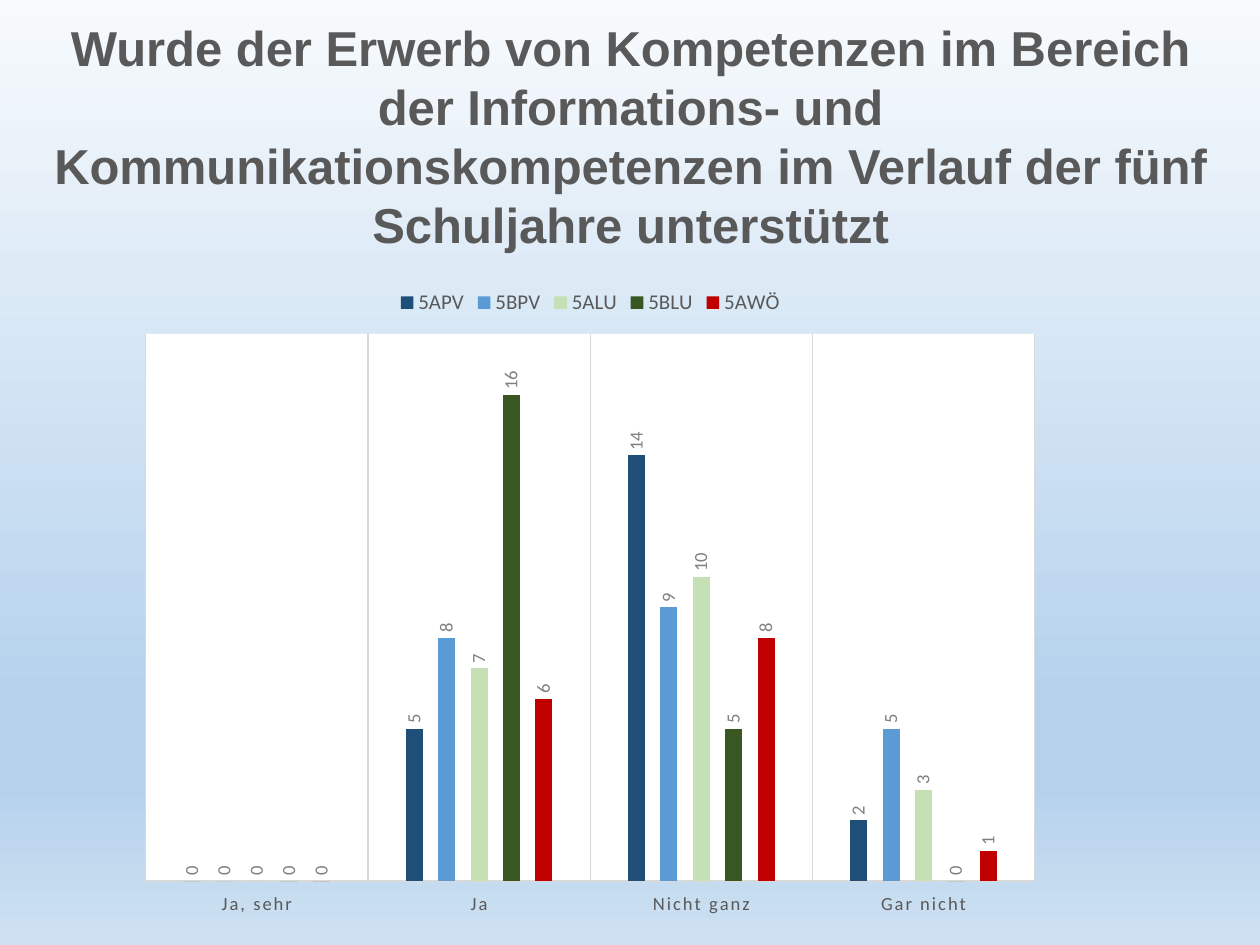
from dataclasses import dataclass

from lxml.etree import SubElement
from pptx import Presentation
from pptx.chart.data import CategoryChartData
from pptx.dml.color import RGBColor
from pptx.enum.chart import XL_CHART_TYPE as ChartType
from pptx.enum.chart import XL_LABEL_POSITION as LabelPos
from pptx.enum.chart import XL_LEGEND_POSITION as LegendPos
from pptx.enum.chart import XL_TICK_LABEL_POSITION as TickLabelPos
from pptx.enum.chart import XL_TICK_MARK as TickMark
from pptx.enum.text import PP_ALIGN as Align
from pptx.oxml import parse_xml
from pptx.oxml.ns import nsdecls, qn
from pptx.util import Pt


@dataclass(frozen=True)
class Theme:
    heading_font: str = "Arial"
    chart_font: str = "Calibri"
    heading_size: float = 28
    legend_size: float = 12
    label_size: float = 10.6
    text: str = "595959"
    value: str = "808080"
    grid: str = "D9D9D9"
    plot: str = "FFFFFF"
    backdrop: tuple = ((0, "F7FAFD"), (74, "B5D2EC"), (83, "B5D2EC"), (100, "CEE1F2"))


THEME = Theme()
QUESTION = (
    "Wurde der Erwerb von Kompetenzen im Bereich der Informations- und "
    "Kommunikationskompetenzen im Verlauf der fünf Schuljahre unterstützt"
)
ANSWERS = ("Ja, sehr", "Ja", "Nicht ganz", "Gar nicht")
CLASSES = (
    ("5APV", (0, 5, 14, 2), "1F4E79"),
    ("5BPV", (0, 8, 9, 5), "5B9BD5"),
    ("5ALU", (0, 7, 10, 3), "C5E0B4"),
    ("5BLU", (0, 16, 5, 0), "385723"),
    ("5AWÖ", (0, 6, 8, 1), "C00000"),
)


def style_font(font, name, size, color, bold=False):
    font.name = name
    font.size = Pt(size)
    font.bold = bold
    font.color.rgb = RGBColor.from_string(color)


def style_line(line):
    line.color.rgb = RGBColor.from_string(THEME.grid)
    line.width = Pt(0.75)


def paint_background(slide):
    fill = slide.background.fill
    fill.gradient()
    fill.gradient_angle = 270  # top to bottom
    stops = slide.element.find(".//" + qn("a:gsLst"))
    stops.clear()
    for percent, color in THEME.backdrop:
        stop = SubElement(stops, qn("a:gs"), pos=str(percent * 1000))
        SubElement(stop, qn("a:srgbClr"), val=color)


def add_question(slide):
    question = slide.shapes.add_textbox(Pt(12.24), Pt(6.48), Pt(696.24), Pt(143.28))
    frame = question.text_frame
    frame.word_wrap = True
    frame.text = QUESTION
    paragraph = frame.paragraphs[0]
    paragraph.alignment = Align.CENTER
    style_font(paragraph.runs[0].font, THEME.heading_font, THEME.heading_size,
               THEME.text, bold=True)


def style_axes(chart):
    answers = chart.category_axis
    answers.major_tick_mark = TickMark.NONE
    answers.tick_label_position = TickLabelPos.LOW
    answers.has_major_gridlines = True
    style_line(answers.major_gridlines.format.line)
    style_line(answers.format.line)
    style_font(answers.tick_labels.font, THEME.chart_font, THEME.label_size, THEME.text)
    # Letter spacing of the answers
    chart.element.find(".//" + qn("c:catAx")).find(".//" + qn("a:defRPr")).set("spc", "120")

    counts = chart.value_axis
    counts.minimum_scale, counts.maximum_scale = 0, 18
    counts.has_major_gridlines = False
    counts.visible = False


def style_series(plot):
    plot.gap_width = 444
    plot.overlap = -90
    plot.vary_by_categories = False
    for series, (_, _, color) in zip(plot.series, CLASSES):
        series.format.fill.solid()
        series.format.fill.fore_color.rgb = RGBColor.from_string(color)
        labels = series.data_labels
        labels.show_value = True
        labels.position = LabelPos.OUTSIDE_END
        style_font(labels.font, THEME.chart_font, THEME.label_size, THEME.value)
        # Turn the values upright
        body = series.data_labels._element.find(".//" + qn("a:bodyPr"))
        body.set("rot", "-5400000")
        body.set("vert", "horz")


def set_plot_area(chart, x, y, w, h):
    area = chart.element.find(".//" + qn("c:plotArea"))
    for layout in area.findall(qn("c:layout")):
        area.remove(layout)
    area.insert(0, parse_xml(
        f'<c:layout {nsdecls("c")}><c:manualLayout><c:layoutTarget val="inner"/>'
        '<c:xMode val="edge"/><c:yMode val="edge"/>'
        f'<c:x val="{x}"/><c:y val="{y}"/><c:w val="{w}"/><c:h val="{h}"/>'
        '</c:manualLayout></c:layout>'))
    area.append(parse_xml(
        f'<c:spPr {nsdecls("c", "a")}><a:solidFill><a:srgbClr val="{THEME.plot}"/>'
        '</a:solidFill><a:ln><a:noFill/></a:ln></c:spPr>'))


def add_results(slide):
    results = CategoryChartData()
    results.categories = ANSWERS
    for name, votes, _ in CLASSES:
        results.add_series(name, votes)
    chart = slide.shapes.add_chart(
        ChartType.COLUMN_CLUSTERED, Pt(72.72), Pt(157.68), Pt(529.2), Pt(367.92), results
    ).chart
    chart.has_title = False
    chart.font.name = THEME.chart_font
    chart.font.size = Pt(10)
    chart.has_legend = True
    chart.legend.position = LegendPos.TOP
    chart.legend.include_in_layout = False
    style_font(chart.legend.font, THEME.chart_font, THEME.legend_size, THEME.text)
    style_axes(chart)
    style_series(chart.plots[0])
    set_plot_area(chart, x=0.02, y=0.09, w=0.96, h=0.85)


def main():
    deck = Presentation()
    deck.slide_width, deck.slide_height = Pt(720), Pt(540)
    slide = deck.slides.add_slide(deck.slide_layouts[6])
    paint_background(slide)
    add_results(slide)
    add_question(slide)
    deck.save("out.pptx")


if __name__ == "__main__":
    main()
